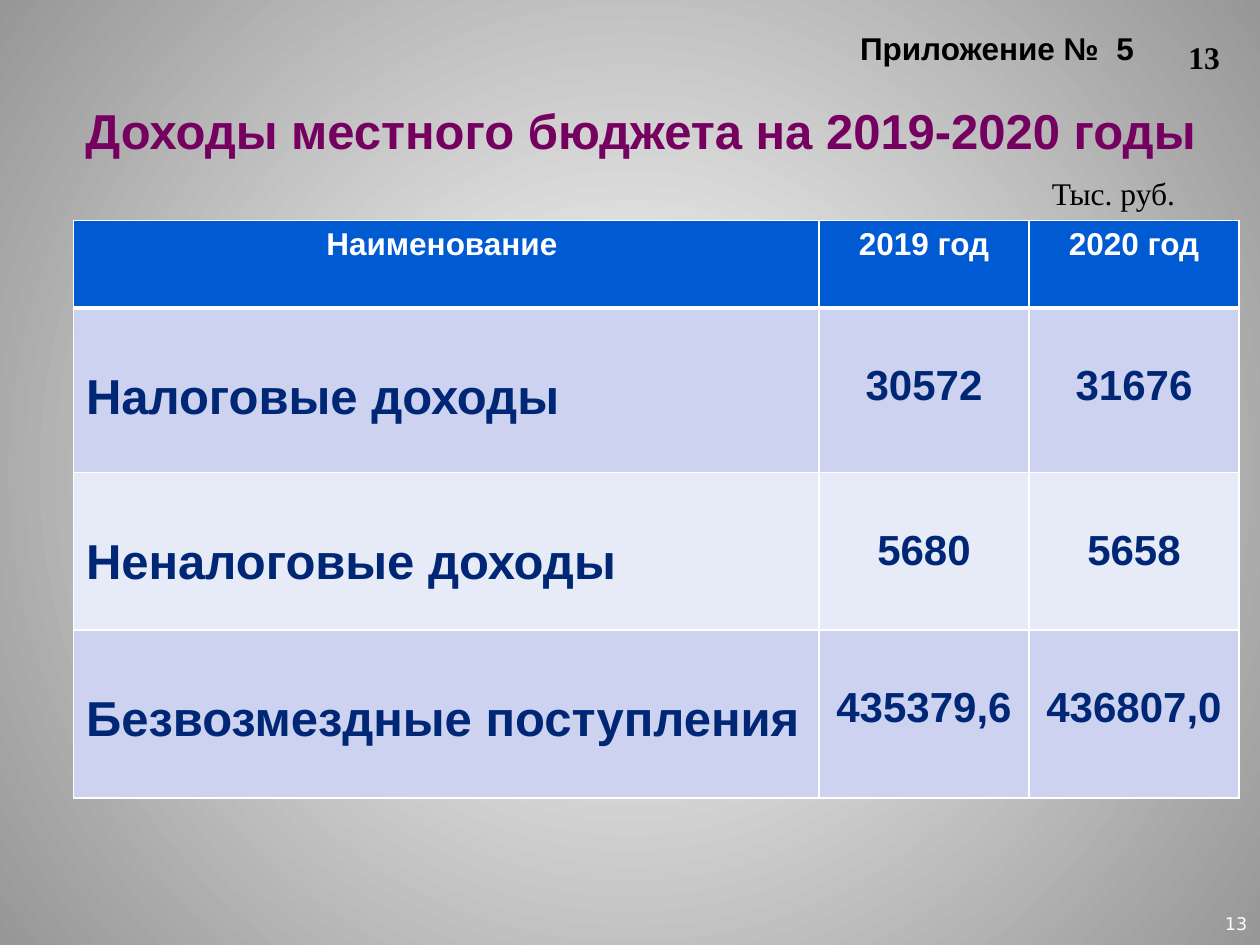
from lxml import etree
from pptx import Presentation
from pptx.dml.color import RGBColor
from pptx.enum.text import PP_ALIGN
from pptx.oxml.ns import qn
from pptx.util import Pt

LEFT, CENTER, RIGHT = PP_ALIGN.LEFT, PP_ALIGN.CENTER, PP_ALIGN.RIGHT
SANS, SERIF, NUMBER_FONT = "Arial", "Times New Roman", "DejaVu Sans"
COLORS = {
    "white": "FFFFFF",
    "edge": "979797",
    "black": "000000",
    "title": "75005F",
    "header": "005BD3",
    "body": "002776",
    "band_dark": "CCD2EF",
    "band_light": "E7EAF7",
}


def rgb(name):
    return RGBColor.from_string(COLORS[name])


class BudgetSlide:
    """Holds the style and the slide being built."""

    def __init__(self, presentation):
        self.slide = presentation.slides.add_slide(presentation.slide_layouts[6])

    def background(self, center, edge):
        fill = self.slide.background.fill
        fill.gradient()
        for stop, position, color in zip(fill.gradient_stops, (0, 1), (center, edge)):
            stop.position = position
            stop.color.rgb = rgb(color)
        gradient = self.slide.element.find(".//" + qn("a:gradFill"))
        linear = gradient.find(qn("a:lin"))
        circle = etree.Element(qn("a:path"), path="circle")
        etree.SubElement(circle, qn("a:fillToRect"),
                         l="50000", t="50000", r="50000", b="50000")
        gradient.replace(linear, circle)

    def set_text(self, frame, text, size, color, font, bold, align):
        frame.text = text
        paragraph = frame.paragraphs[0]
        paragraph.alignment = align
        for run in paragraph.runs:
            run.font.size = Pt(size)
            run.font.bold = bold
            run.font.name = font
            run.font.color.rgb = rgb(color)

    def text(self, box, text, size, color="black", font=SANS, bold=False,
             align=LEFT, margins=(7.2, 3.6, 7.2, 3.6)):
        frame = self.slide.shapes.add_textbox(*map(Pt, box)).text_frame
        frame.word_wrap = True
        (frame.margin_left, frame.margin_top,
         frame.margin_right, frame.margin_bottom) = map(Pt, margins)
        self.set_text(frame, text, size, color, font, bold, align)

    def borders(self, cell, widths):
        properties = cell._tc.get_or_add_tcPr()
        for side, width in zip("LRTB", widths):
            line = etree.SubElement(properties, qn(f"a:ln{side}"), w=str(Pt(width)))
            fill = etree.SubElement(line, qn("a:solidFill"))
            etree.SubElement(fill, qn("a:srgbClr"), val=COLORS["white"])

    def cell(self, cell, text, size, color, fill, align, top, widths):
        self.borders(cell, widths)
        cell.fill.solid()
        cell.fill.fore_color.rgb = rgb(fill)
        cell.margin_top = Pt(top)
        self.set_text(cell.text_frame, text, size, color, SANS, True, align)

    def table(self, left, top, column_widths, row_heights, rows):
        table = self.slide.shapes.add_table(
            len(rows), len(column_widths), Pt(left), Pt(top),
            Pt(sum(column_widths)), Pt(sum(row_heights))).table
        for column, width in zip(table.columns, column_widths):
            column.width = Pt(width)
        for r, (height, values) in enumerate(zip(row_heights, rows)):
            table.rows[r].height = Pt(height)
            for c, value in enumerate(values):
                cell = table.cell(r, c)
                if r == 0:
                    self.cell(cell, value, 18, "white", "header", CENTER, 3.6,
                              (1, 1, 1, 3))
                    continue
                # Body text starts one line below the top of its cell
                size, align, inset = (28, LEFT, 35.8) if c == 0 else (24, CENTER, 31.2)
                band = "band_dark" if r % 2 else "band_light"
                self.cell(cell, value, size, "body", band, align, inset,
                          (1, 1, 3 if r == 1 else 1, 1))


def main():
    presentation = Presentation()
    presentation.slide_width, presentation.slide_height = Pt(720), Pt(540)
    budget = BudgetSlide(presentation)
    budget.background("white", "edge")

    # Headings
    budget.text((69, 16.5, 579, 21.5), "Приложение №  5", 18, bold=True,
                align=RIGHT, margins=(0, 0, 0, 0))
    budget.text((24, 54, 684, 41), "Доходы местного бюджета на 2019-2020 годы", 28,
                "title", bold=True, align=CENTER)

    # Page numbers
    budget.text((697, 522, 16.5, 12), "13", 10, "white", NUMBER_FONT,
                margins=(3, 0, 0, 0))
    budget.text((672, 18, 36, 30), "13", 18, font=SERIF, bold=True)

    # Income table and its unit
    budget.table(42, 126, (426, 120, 120), (50, 94, 90, 96), (
        ("Наименование ", "2019 год", "2020 год"),
        ("Налоговые доходы", "30572", "31676"),
        ("Неналоговые доходы", "5680", "5658"),
        ("Безвозмездные поступления", "435379,6", "436807,0"),
    ))
    budget.text((594, 96, 96, 29), "Тыс. руб.", 18, font=SERIF)

    presentation.save("out.pptx")


if __name__ == "__main__":
    main()
